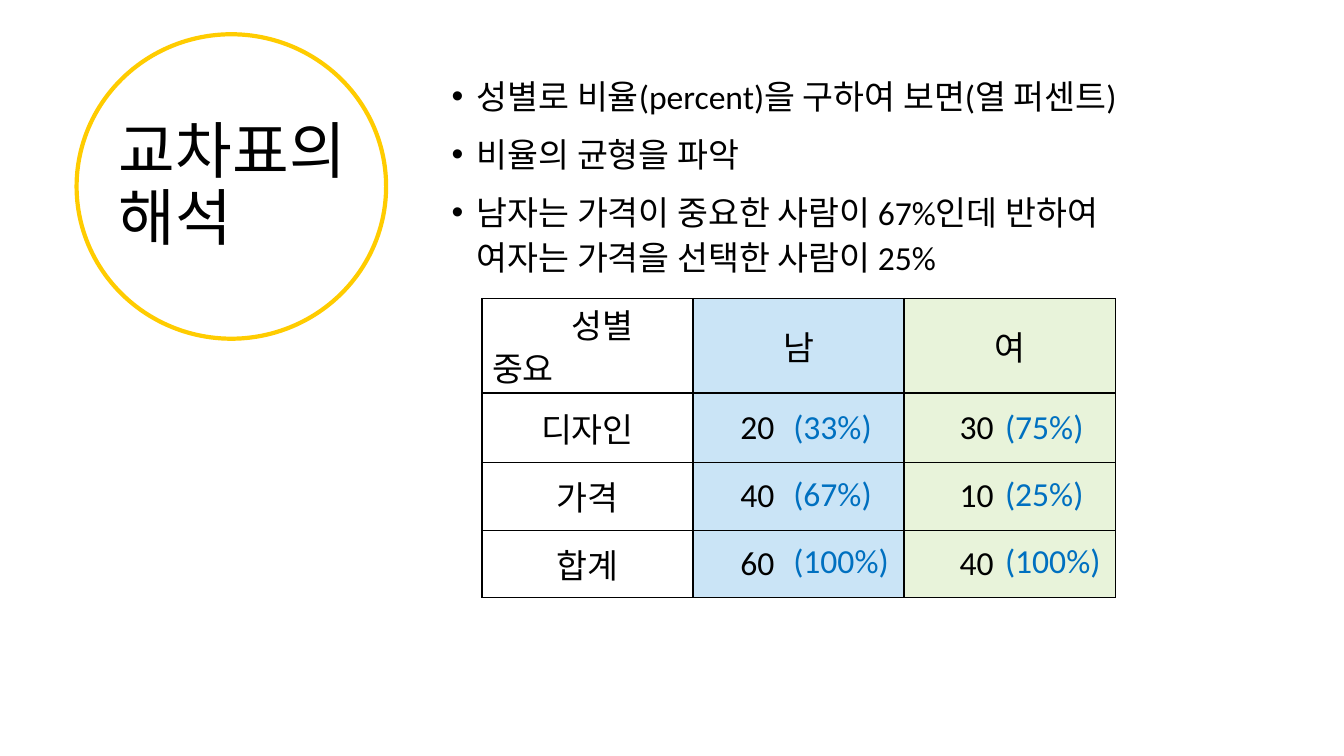
from lxml import etree
from pptx import Presentation
from pptx import util as u
from pptx.dml.color import RGBColor
from pptx.enum import shapes, text
from pptx.oxml.ns import qn

BLACK = RGBColor(0x00, 0x00, 0x00)
WHITE = RGBColor(0xFF, 0xFF, 0xFF)
GOLD = RGBColor(0xFF, 0xCC, 0x00)
SKY = RGBColor(0xCA, 0xE4, 0xF6)
LIME = RGBColor(0xE8, 0xF3, 0xDA)
BLUE = RGBColor(0x00, 0x70, 0xC0)
LEFT, MID = text.PP_ALIGN.LEFT, text.PP_ALIGN.CENTER


def style(para, size, color, lead=1.0, gap=0, align=LEFT):
    para.line_spacing, para.space_before, para.alignment = lead, u.Pt(gap), align
    for run in para.runs:
        run.font.name, run.font.size = "Calibri", u.Pt(size)
        run.font.color.rgb = color


def border(cell):
    props = cell._tc.get_or_add_tcPr()
    for spot, side in enumerate(("lnL", "lnR", "lnT", "lnB")):
        line = etree.Element(qn("a:" + side), w=str(u.Pt(1)))
        fill = etree.SubElement(line, qn("a:solidFill"))
        etree.SubElement(fill, qn("a:srgbClr"), val=str(BLACK))
        props.insert(spot, line)


deck = Presentation()
deck.slide_width, deck.slide_height = u.Inches(13.33), u.Inches(7.5)
slide = deck.slides.add_slide(deck.slide_layouts[5])

# Title
title = slide.shapes.title
title.left, title.top = u.Inches(1.08), u.Inches(0.66)
title.width, title.height = u.Inches(2.91), u.Inches(2.39)
frame = title.text_frame
frame.text = "교차표의 해석"
frame.word_wrap = True
frame.vertical_anchor = text.MSO_ANCHOR.MIDDLE
style(frame.paragraphs[0], 44, BLACK, 0.9)

# Bullet points
body = slide.shapes.add_textbox(
    u.Inches(4.38), u.Inches(0.66), u.Inches(7.32), u.Inches(2.13))
frame = body.text_frame
frame.word_wrap = True
frame.text = "\n".join([
    "성별로 비율(percent)을 구하여 보면(열 퍼센트)",
    "비율의 균형을 파악",
    "남자는 가격이 중요한 사람이 67%인데 반하여 여자는 가격을 선택한 사람이 25%",
])
for para in frame.paragraphs:
    style(para, 24, BLACK, 1.1, 10)
    props = para._p.get_or_add_pPr()
    props.set("marL", str(u.Inches(0.25)))
    props.set("indent", str(-u.Inches(0.25)))
    etree.SubElement(props, qn("a:buFont"), typeface="Arial")
    etree.SubElement(props, qn("a:buChar"), char="•")

# Cross table
ROWS = [
    ("성별\n중요", "남", "여"),
    ("디자인", "20", "30"),
    ("가격", "40", "10"),
    ("합계", "60", "40"),
]
HEIGHTS = (0.94, 0.69, 0.67, 0.67)
FILLS = (WHITE, SKY, LIME)
INSETS = (0.1, 0.47, 0.55)
table = slide.shapes.add_table(
    4, 3, u.Inches(4.78), u.Inches(2.96), u.Inches(6.28), u.Inches(sum(HEIGHTS))).table
table.first_row = table.horz_banding = False
for col in table.columns:
    col.width = u.Inches(6.28 / 3)
for row, high in zip(table.rows, HEIGHTS):
    row.height = u.Inches(high)
for r, row in enumerate(ROWS):
    for c, word in enumerate(row):
        cell = table.cell(r, c)
        cell.text = word
        cell.vertical_anchor = text.MSO_ANCHOR.MIDDLE
        cell.fill.solid()
        cell.fill.fore_color.rgb = FILLS[c]
        border(cell)
        number = r > 0 and c > 0
        if number:
            cell.margin_left = u.Inches(INSETS[c])
        for para in cell.text_frame.paragraphs:
            style(para, 24, BLACK, gap=4.8, align=LEFT if number else MID)

# Corner cell: column heading to the right, row heading to the left
top, low = table.cell(0, 0).text_frame.paragraphs
top.line_spacing, low.line_spacing = 0.9, 0.7
top._p.get_or_add_pPr().set("marL", str(u.Inches(0.3)))
low.alignment = LEFT

# Circle around the title
ring = slide.shapes.add_shape(
    shapes.MSO_SHAPE.OVAL,
    u.Inches(0.76), u.Inches(0.34), u.Inches(3.07), u.Inches(3.02))
ring.shadow.inherit = False
ring.fill.background()
ring.line.color.rgb = GOLD
ring.line.width = u.Pt(3)

# Column percentages
for left, shares in ((7.77, "(33%)\n(67%)\n(100%)"), (9.87, "(75%)\n(25%)\n(100%)")):
    box = slide.shapes.add_textbox(
        u.Inches(left), u.Inches(3.71), u.Inches(1.16), u.Inches(2.04))
    frame = box.text_frame
    frame.word_wrap = False
    frame.auto_size = text.MSO_AUTO_SIZE.SHAPE_TO_FIT_TEXT
    frame.text = shares
    for para in frame.paragraphs:
        style(para, 24, BLUE, u.Pt(48))

deck.save("out.pptx")
